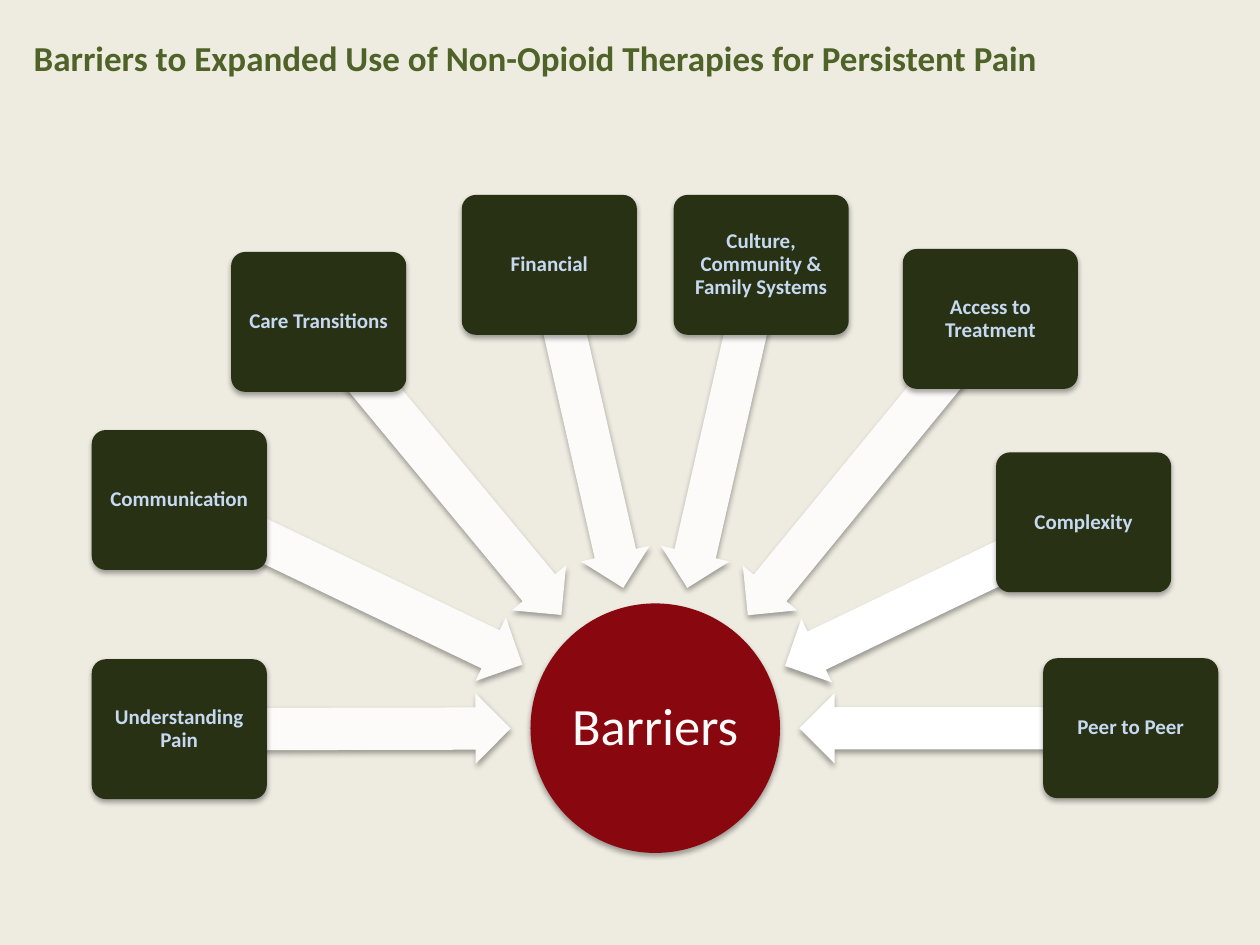
from dataclasses import dataclass
from math import atan2, cos, degrees, sin

from lxml.etree import SubElement
from pptx import Presentation
from pptx.dml.color import RGBColor as Color
from pptx.enum.shapes import MSO_SHAPE as Preset
from pptx.enum.text import MSO_ANCHOR as Anchor
from pptx.enum.text import MSO_AUTO_SIZE as AutoSize
from pptx.enum.text import PP_ALIGN as Align
from pptx.oxml.ns import qn
from pptx.util import Cm, Pt


@dataclass(frozen=True)
class Theme:
    font: str = "Calibri"
    background: str = "EEECE1"
    title: str = "4F6228"
    hub: str = "89070E"
    hub_text: str = "FCFBF9"
    barrier: str = "283114"
    barrier_text: str = "C6D9F1"
    warm_arrow: str = "FCFBF9"
    white_arrow: str = "FFFFFF"
    title_size: int = 20
    hub_size: int = 30
    barrier_size: int = 12


@dataclass(frozen=True)
class Barrier:
    label: str
    left: float
    top: float
    reach: float = 6.68
    arrow_color: str = Theme.warm_arrow


THEME = Theme()
HUB_X, HUB_Y, HUB_DIAMETER = 13.21, 14.68, 5.03
BOX_WIDTH, BOX_HEIGHT = 3.53, 2.82
ARROW_HEIGHT = 1.42

BARRIERS = [
    Barrier("Understanding Pain", 1.85, 13.29),
    Barrier("Communication", 1.85, 8.67, 7.67),
    Barrier("Care Transitions", 4.66, 5.08, 7.67),
    Barrier("Financial", 9.31, 3.93),
    Barrier("Culture, Community & Family Systems", 13.58, 3.93),
    Barrier("Access to Treatment", 18.2, 5.02, 7.72),
    Barrier("Complexity", 20.08, 9.12, arrow_color=THEME.white_arrow),
    Barrier("Peer to Peer", 21.03, 13.27, arrow_color=THEME.white_arrow),
]


def set_values(target, values: dict) -> None:
    for name, value in values.items():
        setattr(target, name, value)


def add_shadow(shape) -> None:
    shape.shadow.inherit = False
    effects = shape._element.spPr.find(qn("a:effectLst"))
    shadow = SubElement(effects, qn("a:outerShdw"), blurRad="40000",
                        dist="23000", dir="5400000", rotWithShape="0")
    color = SubElement(shadow, qn("a:srgbClr"), val="000000")
    SubElement(color, qn("a:alpha"), val="35000")


def add_solid(page, preset: Preset, center_x: float, center_y: float,
              width: float, height: float, color: str):
    shape = page.shapes.add_shape(
        preset, Cm(center_x - width / 2), Cm(center_y - height / 2),
        Cm(width), Cm(height))
    shape.fill.solid()
    shape.fill.fore_color.rgb = Color.from_string(color)
    shape.line.fill.background()
    add_shadow(shape)
    return shape


def write(para, text: str, size: int, color: str, bold: bool) -> None:
    span = para.add_run()
    span.text = text
    set_values(span.font, {"name": THEME.font, "size": Pt(size), "bold": bold})
    span.font.color.rgb = Color.from_string(color)


def add_label(shape, text: str, size: int, color: str, inset: float,
              bold: bool) -> None:
    frame = shape.text_frame
    margins = {f"margin_{side}": Cm(inset)
               for side in ("left", "top", "right", "bottom")}
    set_values(frame, {"word_wrap": True, "vertical_anchor": Anchor.MIDDLE,
                       **margins})
    para = frame.paragraphs[0]
    set_values(para, {"alignment": Align.CENTER, "line_spacing": 0.9,
                      "space_after": Pt(size * 0.35)})
    write(para, text, size, color, bold)


def add_title(page, text: str) -> None:
    box = page.shapes.add_textbox(Cm(0.43), Cm(0.61), Cm(23.93), Cm(1.14))
    set_values(box.text_frame, {"word_wrap": True,
                                "auto_size": AutoSize.SHAPE_TO_FIT_TEXT})
    write(box.text_frame.paragraphs[0], text, THEME.title_size, THEME.title,
          True)


def add_hub(page, text: str) -> None:
    hub = add_solid(page, Preset.OVAL, HUB_X, HUB_Y, HUB_DIAMETER,
                    HUB_DIAMETER, THEME.hub)
    add_label(hub, text, THEME.hub_size, THEME.hub_text, 0.05, False)


def add_barrier(page, barrier: Barrier) -> None:
    center_x = barrier.left + BOX_WIDTH / 2
    center_y = barrier.top + BOX_HEIGHT / 2
    angle = atan2(center_y - HUB_Y, center_x - HUB_X)
    arrow = add_solid(page, Preset.LEFT_ARROW,
                      center_x - cos(angle) * barrier.reach / 2,
                      center_y - sin(angle) * barrier.reach / 2,
                      barrier.reach, ARROW_HEIGHT, barrier.arrow_color)
    arrow.rotation = degrees(angle) % 360
    arrow.adjustments[0] = 0.6
    arrow.adjustments[1] = 0.5

    box = add_solid(page, Preset.ROUNDED_RECTANGLE, center_x, center_y,
                    BOX_WIDTH, BOX_HEIGHT, THEME.barrier)
    box.adjustments[0] = 0.1
    add_label(box, barrier.label, THEME.barrier_size, THEME.barrier_text,
              0.08, True)


def main() -> None:
    deck = Presentation()
    set_values(deck, {"slide_width": Cm(25.4), "slide_height": Cm(19.05)})
    page = deck.slides.add_slide(deck.slide_layouts[6])
    page.background.fill.solid()
    page.background.fill.fore_color.rgb = Color.from_string(THEME.background)
    add_hub(page, "Barriers")
    for barrier in BARRIERS:
        add_barrier(page, barrier)
    add_title(page, "Barriers to Expanded Use of Non-Opioid Therapies "
                    "for Persistent Pain")
    deck.save("out.pptx")


if __name__ == "__main__":
    main()
